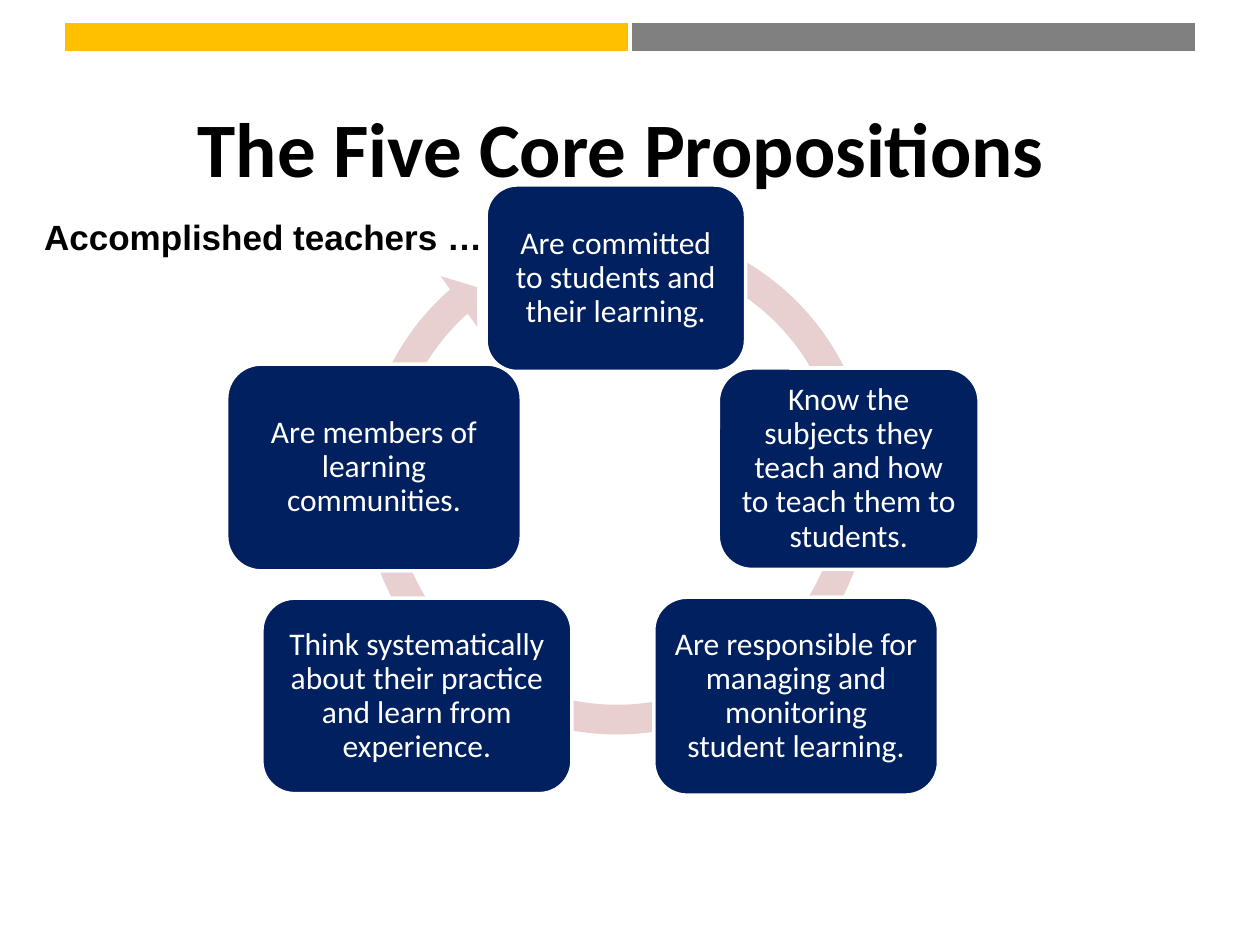
from dataclasses import dataclass

from pptx import Presentation
from pptx.dml.color import RGBColor
from pptx.enum.shapes import MSO_SHAPE
from pptx.enum.text import MSO_ANCHOR, PP_ALIGN
from pptx.util import Cm, Pt

RECTANGLE = MSO_SHAPE.RECTANGLE
ROUNDED = MSO_SHAPE.ROUNDED_RECTANGLE
CIRCULAR_ARROW = MSO_SHAPE.CIRCULAR_ARROW
CENTER, LEFT = PP_ALIGN.CENTER, PP_ALIGN.LEFT
MIDDLE, TOP = MSO_ANCHOR.MIDDLE, MSO_ANCHOR.TOP
WHITE, BLACK, NAVY = "FFFFFF", "000000", "002060"
GOLD, GRAY, PINK = "FFC000", "808080", "E8D0D0"


@dataclass(frozen=True)
class Area:
    left: float
    top: float
    width: float
    height: float

    def lengths(self) -> tuple:
        return Cm(self.left), Cm(self.top), Cm(self.width), Cm(self.height)


@dataclass(frozen=True)
class Proposition:
    text: str
    area: Area


PROPOSITIONS = [
    Proposition("Are committed to students and their learning.",
                Area(9.8, 3.73, 5.23, 3.76)),
    Proposition("Know the subjects they teach and how to teach them to students.",
                Area(14.48, 7.42, 5.26, 4.06)),
    Proposition("Are responsible for managing and monitoring student learning.",
                Area(13.18, 12.04, 5.74, 3.99)),
    Proposition("Think systematically about their practice and learn from experience.",
                Area(5.28, 12.06, 6.25, 3.94)),
    Proposition("Are members of learning communities.",
                Area(4.57, 7.34, 5.94, 4.17)),
]


def color(value: str) -> RGBColor:
    return RGBColor.from_string(value)


def add_filled(page, kind, area: Area, fill: str, outlined: bool = True):
    shape = page.shapes.add_shape(kind, *area.lengths())
    shape.shadow.inherit = False
    shape.fill.solid()
    shape.fill.fore_color.rgb = color(fill)
    if outlined:
        shape.line.color.rgb = color(WHITE)
        shape.line.width = Pt(2)
    else:
        shape.line.fill.background()
    return shape


def write(box, text: str, *, size: float, font: str = "Calibri", ink: str = BLACK,
          bold: bool = False, align=CENTER, anchor=MIDDLE,
          spacing: float = 1.0, inset: float | None = None) -> None:
    frame = box.text_frame
    frame.word_wrap = True
    frame.vertical_anchor = anchor
    if inset is not None:
        frame.margin_left = frame.margin_right = Cm(inset)
        frame.margin_top = frame.margin_bottom = Cm(inset)
    para = frame.paragraphs[0]
    para.alignment = align
    para.line_spacing = spacing
    span = para.add_run()
    span.text = text
    span.font.name = font
    span.font.size = Pt(size)
    span.font.bold = bold
    span.font.color.rgb = color(ink)


def add_proposition(page, proposition: Proposition) -> None:
    box = add_filled(page, ROUNDED, proposition.area, NAVY)
    write(box, proposition.text, size=18, ink=WHITE, spacing=0.9, inset=0.19)


def add_cycle_arrow(page) -> None:
    arrow = add_filled(page, CIRCULAR_ARROW, Area(6.99, 4.24, 10.9, 10.9), PINK, False)
    for index, value in enumerate((0.055, 3.307, 137.138, 174.239, 0.058)):
        arrow.adjustments[index] = value


def main() -> None:
    deck = Presentation()
    deck.slide_width, deck.slide_height = Cm(25.4), Cm(19.05)
    page = deck.slides.add_slide(deck.slide_layouts[5])

    title = page.shapes.title
    title.left, title.top, title.width, title.height = Area(1.27, 1.47, 22.86, 2.97).lengths()
    write(title, "The Five Core Propositions ", size=44, bold=True)

    bar_width = 11.43
    for index, fill in enumerate((GOLD, GRAY)):
        add_filled(page, RECTANGLE, Area(1.27 + index * bar_width, 0.43, bar_width, 0.64), fill)

    add_cycle_arrow(page)
    for proposition in PROPOSITIONS:
        add_proposition(page, proposition)

    label = page.shapes.add_textbox(*Area(0.64, 4.22, 10.19, 1.12).lengths())
    write(label, "Accomplished teachers …", size=20, font="Arial", bold=True,
          align=LEFT, anchor=TOP)

    deck.save("out.pptx")


if __name__ == "__main__":
    main()
